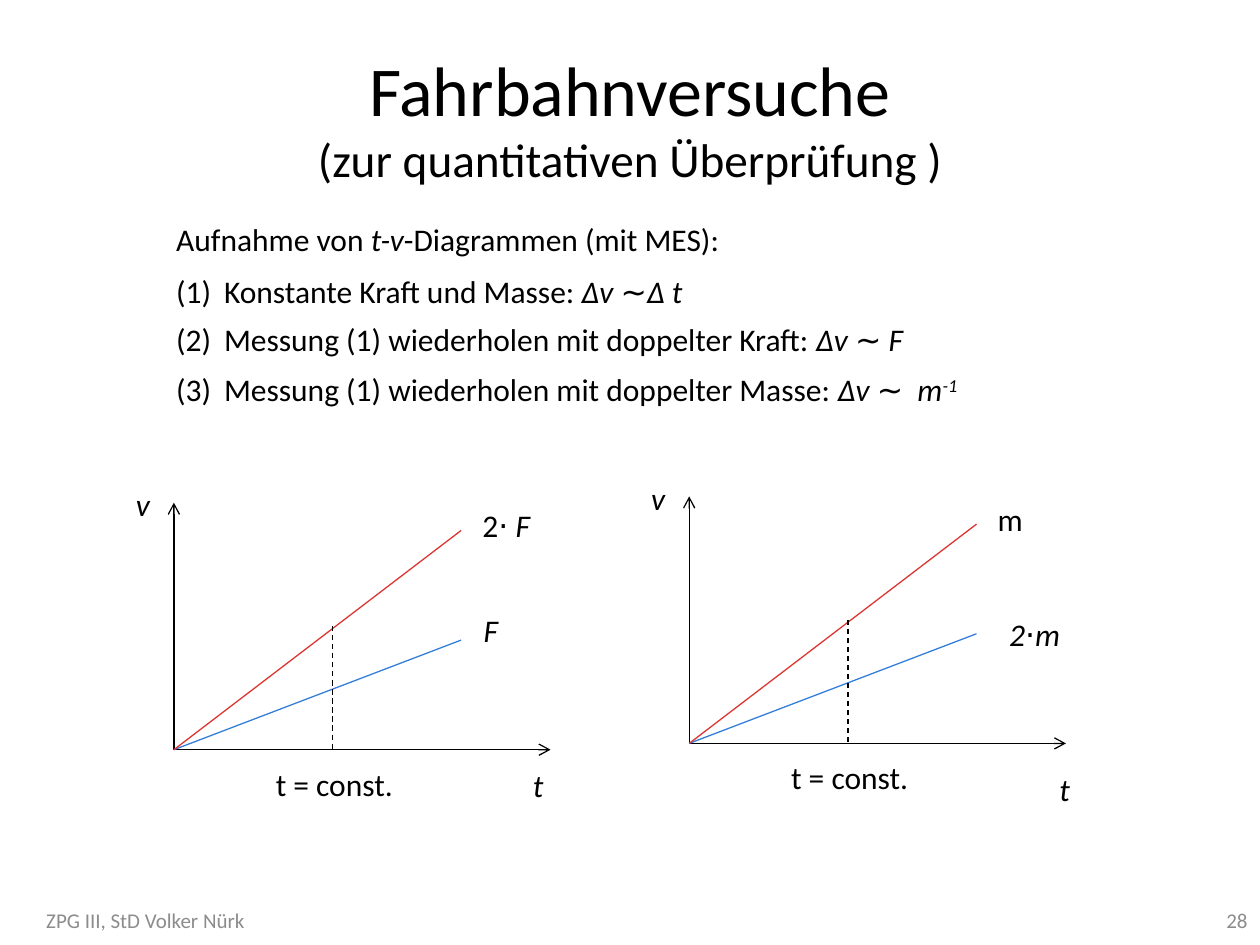
import pptx
import pptx.dml.color
import pptx.enum.dml
import pptx.enum.shapes
import pptx.enum.text
import pptx.oxml.ns
import pptx.util
from lxml import etree

Inches = pptx.util.Inches
Align = pptx.enum.text.PP_ALIGN
Anchor = pptx.enum.text.MSO_ANCHOR
qn = pptx.oxml.ns.qn

BLACK, GREY, BLUE, RED = "000000", "8C8C8C", "337ED9", "DD3530"


def colour(value):
    return pptx.dml.color.RGBColor.from_string(value)


class SlideWriter:
    """Holds the style and the current slide."""
    font = "Calibri"
    line_width = pptx.util.Pt(0.75)

    def __init__(self, slide):
        self.slide = slide

    def text(self, left, top, width, height, runs, size=18, tint=BLACK,
             align=Align.LEFT, anchor=Anchor.TOP):
        """Each run is (text, style); style is a mix of i (italic), ^ (raised)."""
        box = self.slide.shapes.add_textbox(
            Inches(left), Inches(top), Inches(width), Inches(height))
        frame = box.text_frame
        frame.word_wrap = True
        frame.vertical_anchor = anchor
        paragraph = frame.paragraphs[0]
        paragraph.alignment = align
        paragraph.font.name = self.font
        paragraph.font.size = pptx.util.Pt(size)
        paragraph.font.color.rgb = colour(tint)
        for words, style in runs:
            run = paragraph.add_run()
            run.text = words
            if "i" in style:
                run.font.italic = True
            if "^" in style:
                run._r.get_or_add_rPr().set("baseline", "30000")
        return paragraph

    def numbered(self, number, top, height, runs):
        paragraph = self.text(1.3, top, 7.6, height, runs)
        properties = paragraph._p.get_or_add_pPr()
        indent = Inches(0.38)
        properties.set("marL", str(indent))
        properties.set("indent", str(-indent))
        numbering = etree.Element(qn("a:buAutoNum"), type="arabicParenBoth",
                                  startAt=str(number))
        properties.insert(0, numbering)

    def line(self, start, end, tint=BLACK, arrow=False, dashed=False):
        connector = self.slide.shapes.add_connector(
            pptx.enum.shapes.MSO_CONNECTOR.STRAIGHT,
            *(Inches(value) for value in (*start, *end)))
        connector.line.color.rgb = colour(tint)
        connector.line.width = self.line_width
        if dashed:
            connector.line.dash_style = pptx.enum.dml.MSO_LINE.DASH
        if arrow:
            etree.SubElement(connector.line._get_or_add_ln(),
                             qn("a:tailEnd"), type="arrow")
        etree.SubElement(connector._element.spPr, qn("a:effectLst"))

    def diagram(self, x, y, upper, lower, lower_at, t_at):
        """A t-v diagram with its origin at x, y; label places are offsets."""
        origin = (x, y)
        # Axes, the two motions and the common time
        self.line(origin, (x + 2.99, y), arrow=True)
        self.line(origin, (x, y - 1.96), arrow=True)
        self.line(origin, (x + 2.28, y - 0.87), BLUE)
        self.line(origin, (x + 2.28, y - 1.74), RED)
        self.line((x + 1.26, y - 0.98), (x + 1.26, y), dashed=True)
        # Labels
        labels = [
            ((-0.4, -2.15), 0.71, [("v", "i")]),
            (t_at, 0.79, [("t", "i")]),
            ((2.35, -1.98), 0.79, upper),
            (lower_at, 0.79, lower),
            ((0.71, 0.07), 1.65, [("t = const.", "")]),
        ]
        for (dx, dy), width, runs in labels:
            self.text(x + dx, y + dy, width, 0.4, runs)


def main():
    deck = pptx.Presentation()
    deck.slide_width, deck.slide_height = Inches(10), Inches(7.5)
    writer = SlideWriter(deck.slides.add_slide(deck.slide_layouts[6]))

    # Title with its smaller second line
    title = writer.text(0.5, 0.3, 9, 1.25, [("Fahrbahnversuche", "")], 40,
                        align=Align.CENTER, anchor=Anchor.MIDDLE)
    title.add_line_break()
    subtitle = title.add_run()
    subtitle.text = "(zur quantitativen Überprüfung )"
    subtitle.font.size = pptx.util.Pt(27)

    # Measurements
    writer.text(1.3, 1.7, 6.78, 0.4, [
        ("Aufnahme von ", ""), ("t-v", "i"), ("-Diagrammen (mit MES):", "")])
    repeat = "Messung (1) wiederholen mit doppelter "
    writer.numbered(1, 2.11, 0.4, [
        ("Konstante Kraft und Masse: ", ""), ("Δv ∼Δ t", "i")])
    writer.numbered(2, 2.49, 0.4, [
        (repeat + "Kraft: ", ""), ("Δv ∼ F", "i")])
    writer.numbered(3, 2.89, 0.71, [
        (repeat + "Masse: ", ""), ("Δv ∼  m", "i"), ("-1", "i^")])

    # Diagrams for doubled force and doubled mass
    writer.diagram(1.38, 5.95, [("2⋅ ", ""), ("F", "i")], [("F", "i")],
                   lower_at=(2.36, -1.15), t_at=(2.75, 0.08))
    writer.diagram(5.47, 5.9, [("m", "")],
                   [("2", "i"), ("⋅", ""), ("m", "i")],
                   lower_at=(2.44, -1.07), t_at=(2.84, 0.16))

    # Footer
    writer.text(-0.43, 7.1, 3.17, 0.4, [("ZPG III, StD Volker Nürk", "")], 12,
                GREY, Align.CENTER, Anchor.MIDDLE)
    writer.text(7.67, 7.1, 2.33, 0.4, [("28", "")], 12,
                GREY, Align.RIGHT, Anchor.MIDDLE)

    deck.save("out.pptx")


if __name__ == "__main__":
    main()
